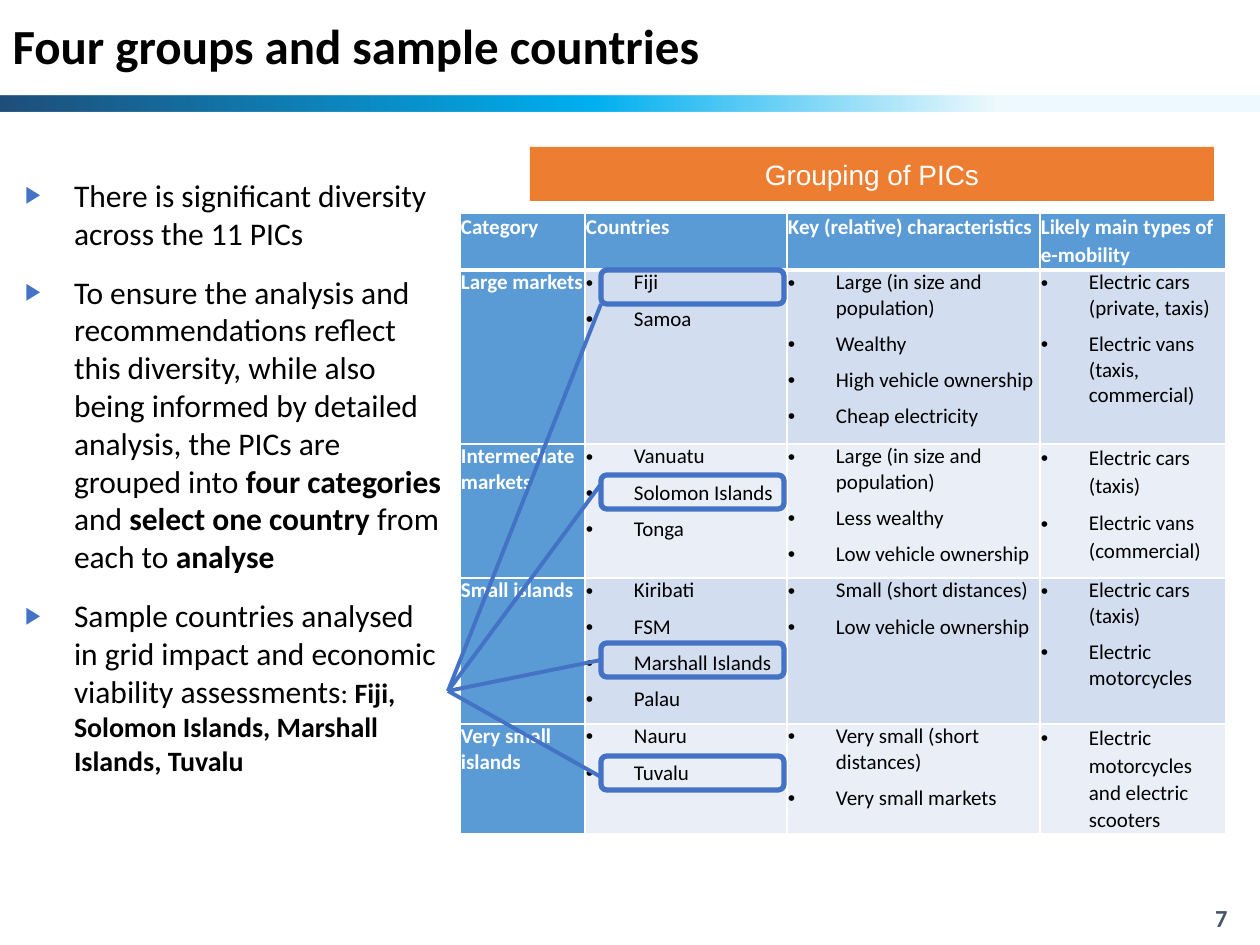
from pptx import Presentation
from pptx.dml.color import RGBColor
from pptx.enum.shapes import MSO_CONNECTOR, MSO_SHAPE
from pptx.enum.text import MSO_ANCHOR, MSO_AUTO_SIZE, PP_ALIGN
from pptx.oxml import parse_xml
from pptx.oxml.ns import nsdecls
from pptx.util import Emu, Pt

BLACK = RGBColor(0x00, 0x00, 0x00)
WHITE = RGBColor(0xFF, 0xFF, 0xFF)
ACCENT = RGBColor(0x44, 0x72, 0xC4)
ORANGE = RGBColor(0xED, 0x7D, 0x31)
SLATE = RGBColor(0x44, 0x54, 0x6A)
HEADING = RGBColor(0x5B, 0x9B, 0xD5)
BAND_DARK = RGBColor(0xD2, 0xDE, 0xEF)
BAND_LIGHT = RGBColor(0xEA, 0xEF, 0xF7)
NAVY = RGBColor(0x1F, 0x4E, 0x79)
SKY = RGBColor(0x00, 0xB0, 0xF0)
NS = nsdecls("a")


def px(*lengths):
    return [Emu(round(length * 914400 / 126)) for length in lengths]


def write(frame, paragraphs, size, color=BLACK, font="Calibri", bold=False, align=PP_ALIGN.LEFT,
          anchor=MSO_ANCHOR.TOP, insets=None, wrap=True, spacing=None, gap=0, bullet=None, indent=0):
    frame.word_wrap = wrap
    frame.vertical_anchor = anchor
    if insets:
        frame.margin_left, frame.margin_top, frame.margin_right, frame.margin_bottom = px(*insets)
    for index, runs in enumerate(paragraphs):
        paragraph = frame.paragraphs[0] if index == 0 else frame.add_paragraph()
        if bullet:
            properties = paragraph._p.get_or_add_pPr()
            hanging = px(indent)[0]
            properties.set("marL", str(hanging))
            properties.set("indent", str(-hanging))
            for element in bullet:
                properties.append(parse_xml(element))
        paragraph.alignment = align
        paragraph.line_spacing = spacing
        paragraph.space_before = Pt(gap if index else 0)
        paragraph.space_after = Pt(gap)
        for text, *style in [(runs,)] if isinstance(runs, str) else runs:
            run = paragraph.add_run()
            run.text = text
            run.font.name = font
            run.font.bold = style[0] if style else bold
            run.font.size = Pt(style[1] if len(style) > 1 else size)
            run.font.color.rgb = color


deck = Presentation()
deck.slide_width, deck.slide_height = px(1260, 945)
slide = deck.slides.add_slide(deck.slide_layouts[1])
shapes = slide.shapes

title, points = slide.placeholders
title.left, title.top, title.width, title.height = px(0, 0, 1260, 97)
title.text_frame.auto_size = MSO_AUTO_SIZE.NONE
write(title.text_frame, ["Four groups and sample countries"], 28, bold=True,
      anchor=MSO_ANCHOR.MIDDLE, spacing=0.9)

rule = shapes.add_shape(MSO_SHAPE.RECTANGLE, *px(0, 96, 1260, 16))
rule.shadow.inherit = False
rule.line.fill.background()
rule.fill.gradient()
rule.fill.gradient_angle = 0
stops = rule.fill.gradient_stops
for stop, position, color in zip(stops, (0, 0.47), (NAVY, SKY)):
    stop.position = position
    stop.color.rgb = color
stop_list = rule._element.spPr.find(".//{*}gsLst")
stop_list.append(parse_xml(
    f'<a:gs {NS} pos="79000"><a:srgbClr val="{SKY}"><a:alpha val="7000"/></a:srgbClr></a:gs>'))

points.left, points.top, points.width, points.height = px(20, 168, 427, 663)
points.text_frame.auto_size = MSO_AUTO_SIZE.NONE
ARROW_BULLET = [f'<a:buClr {NS}><a:srgbClr val="{ACCENT}"/></a:buClr>',
                f'<a:buSzPct {NS} val="75000"/>',
                f'<a:buFont {NS} typeface="Arial"/>',
                f'<a:buChar {NS} char="▶"/>']
write(points.text_frame, [
    "There is significant diversity across the 11 PICs",
    [("To ensure the analysis and recommendations reflect this diversity, while also being "
      "informed by detailed analysis, the PICs are grouped into ",),
     ("four categories ", True), ("and ",), ("select one country ", True),
     ("from each to ",), ("analyse", True)],
    [("Sample countries analysed in grid impact and economic viability assessments",),
     (": ", False, 16), ("Fiji, Solomon Islands, Marshall Islands, Tuvalu", True, 16)],
], 18, insets=(5, 8, 4, 4), spacing=1.0, gap=6, bullet=ARROW_BULLET, indent=49)

groups = [
    ["Category", "Countries", "Key (relative) characteristics", "Likely main types of e-mobility"],
    ["Large markets", ["Fiji", "Samoa"],
     ["Large (in size and population)", "Wealthy", "High vehicle ownership", "Cheap electricity"],
     ["Electric cars (private, taxis)", "Electric vans (taxis, commercial)"]],
    ["Intermediate markets", ["Vanuatu", "Solomon Islands", "Tonga"],
     ["Large (in size and population)", "Less wealthy", "Low vehicle ownership"],
     ["Electric cars (taxis)", "Electric vans (commercial)"]],
    ["Small islands", ["Kiribati", "FSM", "Marshall Islands", "Palau"],
     ["Small (short distances)", "Low vehicle ownership"],
     ["Electric cars (taxis)", "Electric motorcycles"]],
    ["Very small islands", ["Nauru", "Tuvalu"],
     ["Very small (short distances)", "Very small markets"],
     ["Electric motorcycles and electric scooters"]],
]
DOT_BULLET = [f'<a:buFont {NS} typeface="Arial"/>', f'<a:buChar {NS} char="•"/>']
column_widths = px(125, 202, 253, 186)
row_heights = px(57, 174, 134, 146, 95)
grouping = shapes.add_table(5, 4, *px(460, 213, 766, 606)).table
grouping.first_row = grouping.horz_banding = False
for column, width in zip(grouping.columns, column_widths):
    column.width = width
for r, (group, height) in enumerate(zip(groups, row_heights)):
    grouping.rows[r].height = height
    for c, content in enumerate(group):
        cell = grouping.cell(r, c)
        heading = r == 0 or c == 0
        thick = {"B": r == 0, "T": r == 1}
        for side in "LRTB":
            weight = Pt(3 if thick.get(side) else 1)
            cell._tc.get_or_add_tcPr().append(parse_xml(
                f'<a:ln{side} {NS} w="{weight}"><a:solidFill><a:srgbClr val="{WHITE}"/>'
                f'</a:solidFill></a:ln{side}>'))
        cell.fill.solid()
        cell.fill.fore_color.rgb = HEADING if heading else BAND_DARK if r % 2 else BAND_LIGHT
        cell.margin_left, cell.margin_top, cell.margin_right, cell.margin_bottom = px(1, 0, 1, 0)
        loose = r == 0 or (c == 3 and r in (2, 4))
        write(cell.text_frame, [content] if heading else content, 12,
              color=WHITE if heading else BLACK, bold=heading, spacing=1.07 if loose else 1.0,
              gap=3, bullet=None if heading else DOT_BULLET, indent=48)

banner = shapes.add_shape(MSO_SHAPE.RECTANGLE, *px(530, 147, 684, 54))
banner.shadow.inherit = False
banner.fill.solid()
banner.fill.fore_color.rgb = ORANGE
banner.line.fill.background()
write(banner.text_frame, ["Grouping of PICs"], 16, color=WHITE, font="Arial", wrap=False,
      align=PP_ALIGN.CENTER, anchor=MSO_ANCHOR.MIDDLE, insets=(9, 5, 9, 5))

for sample_top, pointer_end in [(270, 304), (475, 484), (643, 660), (756, 777)]:
    sample = shapes.add_shape(MSO_SHAPE.ROUNDED_RECTANGLE, *px(601, sample_top, 183, 34))
    sample.shadow.inherit = False
    sample.fill.background()
    sample.line.color.rgb = ACCENT
    sample.line.width = Pt(3)
    pointer = shapes.add_connector(MSO_CONNECTOR.STRAIGHT, *px(448, 691, 601, pointer_end))
    pointer.line.color.rgb = ACCENT
    pointer.line.width = Pt(2.25)
    pointer._element.spPr.append(parse_xml(f"<a:effectLst {NS}/>"))

page_number = shapes.add_textbox(*px(956, 893, 284, 50))
write(page_number.text_frame, ["7"], 14, color=SLATE, bold=True,
      align=PP_ALIGN.RIGHT, anchor=MSO_ANCHOR.MIDDLE)

deck.save("out.pptx")
